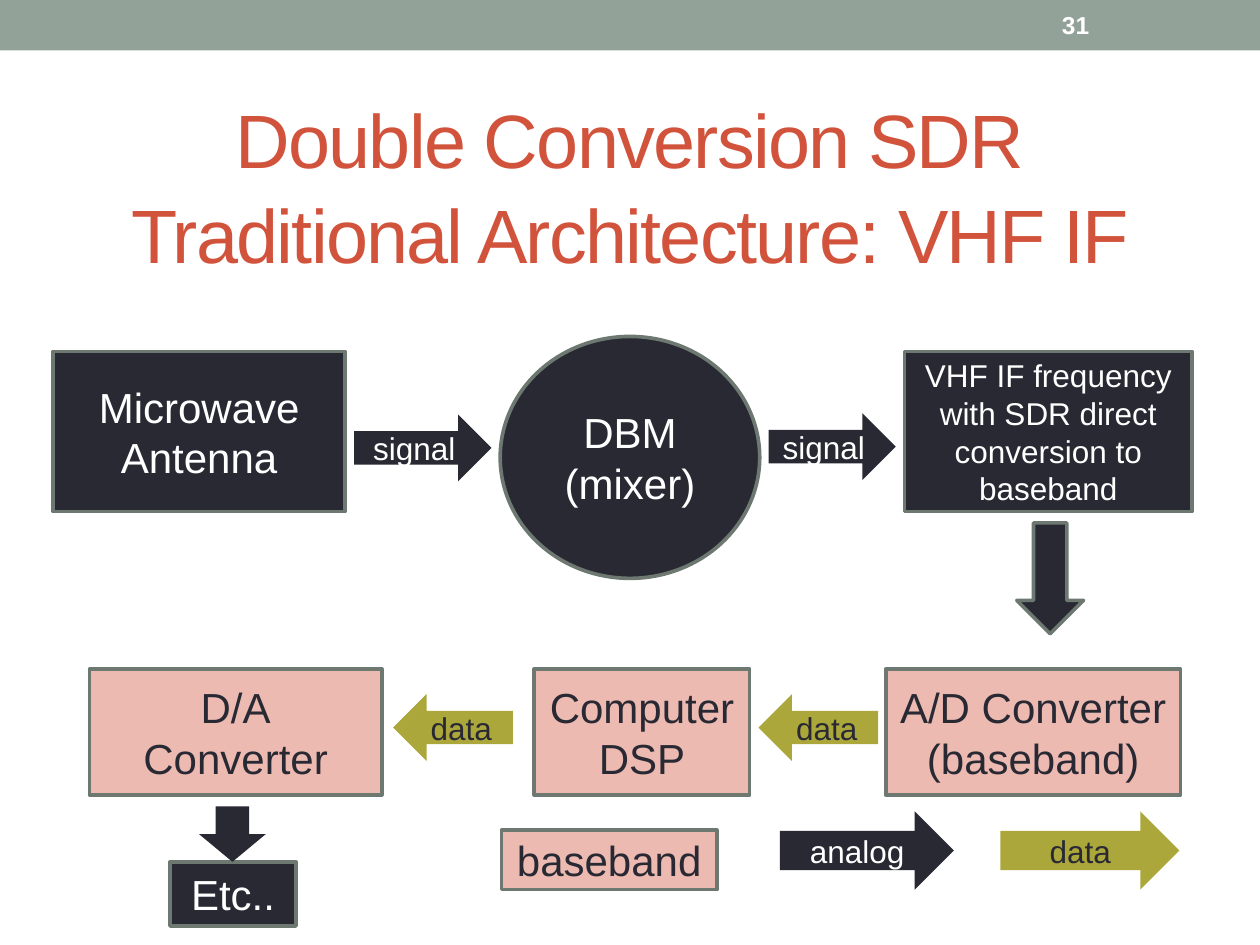
"""Build the double conversion SDR architecture slide."""
from dataclasses import dataclass
from typing import Optional

import pptx
import pptx.util
from pptx.dml.color import RGBColor
from pptx.enum.shapes import MSO_SHAPE
from pptx.enum.text import MSO_ANCHOR, PP_ALIGN
from pptx.util import Inches

WHITE = RGBColor(0xFF, 0xFF, 0xFF)
SAGE = RGBColor(0x93, 0xA2, 0x99)
OUTLINE = RGBColor(0x6D, 0x78, 0x71)
NAVY = RGBColor(0x29, 0x29, 0x34)
PINK = RGBColor(0xED, 0xBA, 0xB1)
OLIVE = RGBColor(0xAC, 0xA7, 0x3B)
RUST = RGBColor(0xD2, 0x53, 0x3C)

TOP_ROW, LOWER_ROW = 2.79, 5.31
TOP_HEIGHT, LOWER_HEIGHT = 1.27, 1.0
FLOW_HEIGHT, KEY_HEIGHT = 0.53, 0.62


@dataclass(frozen=True)
class Block:
    """A stage of the signal chain."""
    label: str
    left: float
    top: float
    width: float
    height: float
    fill: RGBColor
    kind: MSO_SHAPE = MSO_SHAPE.RECTANGLE
    size: float = 24


@dataclass(frozen=True)
class Flow:
    """A block arrow between stages or in the key."""
    label: str
    left: float
    top: float
    width: float
    height: float
    fill: RGBColor
    kind: MSO_SHAPE
    outline: Optional[RGBColor] = None


BLOCKS = [
    Block("Microwave Antenna", 0.42, TOP_ROW, 2.32, TOP_HEIGHT, NAVY),
    Block("DBM\n(mixer)", 3.97, 2.67, 2.06, 1.92, NAVY, MSO_SHAPE.OVAL),
    Block("VHF IF frequency with SDR direct conversion to\nbaseband",
          7.18, TOP_ROW, 2.28, TOP_HEIGHT, NAVY, size=18),
    Block("A/D Converter\n(baseband)", 7.03, LOWER_ROW, 2.34, LOWER_HEIGHT, PINK),
    Block("Computer\nDSP", 4.24, LOWER_ROW, 1.71, LOWER_HEIGHT, PINK),
    Block("D/A\nConverter", 0.71, LOWER_ROW, 2.32, LOWER_HEIGHT, PINK),
    Block("baseband", 3.98, 6.59, 1.71, 0.47, PINK),
    Block("Etc..", 1.35, 6.84, 1, 0.51, NAVY),
]

FLOWS = [
    Flow("signal", 2.81, 3.29, 1.09, FLOW_HEIGHT, NAVY, MSO_SHAPE.RIGHT_ARROW),
    Flow("signal", 6.1, 3.28, 1.01, FLOW_HEIGHT, NAVY, MSO_SHAPE.RIGHT_ARROW),
    Flow("", 8.07, 4.15, 0.53, 0.88, NAVY, MSO_SHAPE.DOWN_ARROW, OUTLINE),
    Flow("data", 6.02, 5.51, 0.95, FLOW_HEIGHT, OLIVE, MSO_SHAPE.LEFT_ARROW),
    Flow("data", 3.12, 5.51, 0.95, FLOW_HEIGHT, OLIVE, MSO_SHAPE.LEFT_ARROW),
    Flow("", 1.58, 6.4, 0.53, 0.44, NAVY, MSO_SHAPE.DOWN_ARROW),
    Flow("analog", 6.19, 6.44, 1.38, KEY_HEIGHT, NAVY, MSO_SHAPE.RIGHT_ARROW),
    Flow("data", 7.94, 6.44, 1.42, KEY_HEIGHT, OLIVE, MSO_SHAPE.RIGHT_ARROW),
]


def write_text(frame, text: str, *, size: float, color: RGBColor,
               align=PP_ALIGN.CENTER, bold: bool = False, wrap: bool = True,
               spacing: Optional[float] = None, tracking: int = 0) -> None:
    """Fill a text frame; newlines start paragraphs and vertical tabs break lines."""
    frame.text = text
    frame.word_wrap = wrap
    frame.vertical_anchor = MSO_ANCHOR.MIDDLE
    for paragraph in frame.paragraphs:
        paragraph.alignment = align
        paragraph.line_spacing = spacing
        for run in paragraph.runs:
            run.font.name = "Arial"
            run.font.size = pptx.util.Pt(size)
            run.font.bold = bold
            run.font.color.rgb = color
            if tracking:
                run.font._element.set("spc", str(tracking))


def add_solid(slide, kind: MSO_SHAPE, left: float, top: float, width: float,
              height: float, fill: RGBColor, outline: Optional[RGBColor] = None):
    """Add a flat shape with an optional outline."""
    solid = slide.shapes.add_shape(
        kind, Inches(left), Inches(top), Inches(width), Inches(height))
    solid.shadow.inherit = False
    solid.fill.solid()
    solid.fill.fore_color.rgb = fill
    if outline is None:
        solid.line.fill.background()
    else:
        solid.line.color.rgb = outline
        solid.line.width = pptx.util.Pt(2.08)
    return solid


def ink_on(fill: RGBColor) -> RGBColor:
    """Choose the text colour that reads on a fill."""
    return WHITE if fill == NAVY else NAVY


def draw_block(slide, block: Block) -> None:
    """Draw one outlined stage."""
    stage = add_solid(slide, block.kind, block.left, block.top, block.width,
                      block.height, block.fill, OUTLINE)
    write_text(stage.text_frame, block.label, size=block.size,
               color=ink_on(block.fill))


def draw_flow(slide, flow: Flow) -> None:
    """Draw one block arrow and its label."""
    arrow = add_solid(slide, flow.kind, flow.left, flow.top, flow.width,
                      flow.height, flow.fill, flow.outline)
    if flow.label:
        frame = arrow.text_frame
        frame.margin_left = frame.margin_right = 0
        frame.margin_top = frame.margin_bottom = 0
        write_text(frame, flow.label, size=18, color=ink_on(flow.fill), wrap=False)


def main() -> None:
    """Compose and save the slide."""
    deck = pptx.Presentation()
    deck.slide_width, deck.slide_height = Inches(10), Inches(7.5)
    slide = deck.slides.add_slide(deck.slide_layouts.get_by_name("Title Only"))

    add_solid(slide, MSO_SHAPE.RECTANGLE, 0, 0, 10, 0.4, SAGE)
    title = slide.shapes.title
    title.left, title.top = Inches(0.5), Inches(0.58)
    title.width, title.height = Inches(9), Inches(1.75)
    write_text(title.text_frame,
               "Double Conversion SDR\vTraditional Architecture: VHF IF",
               size=43.2, color=RUST, spacing=1.05, tracking=-100)
    page_number = slide.shapes.add_textbox(
        Inches(8.33), Inches(0.02), Inches(1.17), Inches(0.36))
    write_text(page_number.text_frame, "31", size=14, color=WHITE,
               align=PP_ALIGN.LEFT, bold=True)

    for block in BLOCKS:
        draw_block(slide, block)
    for flow in FLOWS:
        draw_flow(slide, flow)
    deck.save("out.pptx")


if __name__ == "__main__":
    main()
